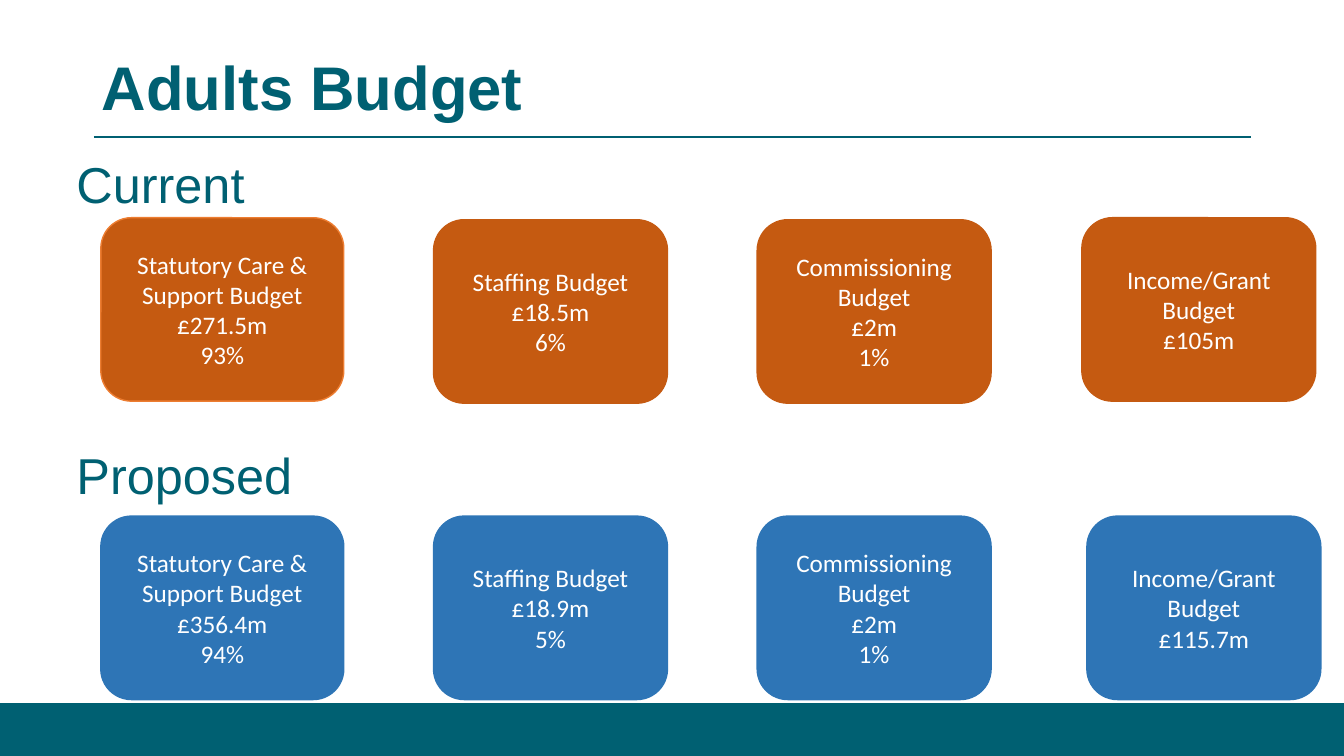
from lxml import etree
from pptx import Presentation, util as u
from pptx.dml.color import RGBColor
from pptx.enum import shapes, text
from pptx.oxml.ns import qn

TEAL = RGBColor(0x00, 0x60, 0x72)
RUST = RGBColor(0xC5, 0x5A, 0x11)
ORANGE = RGBColor(0xED, 0x7D, 0x31)
BLUE = RGBColor(0x2E, 0x75, 0xB6)
WHITE = RGBColor(0xFF, 0xFF, 0xFF)

WIDTH, HEIGHT = 13.33, 7.5
# Card grid, in inches
LEFT, COLUMN = 1.09, 3.21
TOP, ROW = 2.18, 2.94
CARD_W, CARD_H = 2.32, 1.82

SERVICES = ["Statutory Care & Support Budget", "Staffing Budget",
            "Commissioning Budget", "Income/Grant Budget"]
# Heading, heading top, fill, first card's line, figures,
# and each card's nudge from the grid (left, top)
BUDGETS = [
    ("Current", 1.47, RUST, ORANGE,
     [("£271.5m", "93%"), ("£18.5m", "6%"), ("£2m", "1%"), ("£105m",)],
     [(0, -0.02), (0, 0), (0, 0), (0.01, -0.02)]),
    ("Proposed", 4.36, BLUE, BLUE,
     [("£356.4m", "94%"), ("£18.9m", "5%"), ("£2m", "1%"), ("£115.7m",)],
     [(0, 0), (0, 0), (0, 0), (0.06, 0)]),
]


class BudgetSlide:
    def __init__(self, prs):
        self.s = prs.slides.add_slide(prs.slide_layouts[5])
        self.heading_font, self.card_font = "Arial", "Calibri"

    def set_text(self, tf, lines, font, size, color, align, bold=False):
        tf.word_wrap = True
        tf.auto_size = text.MSO_AUTO_SIZE.NONE
        tf.text = "\n".join(lines)
        for p in tf.paragraphs:
            p.alignment = align
            for r in p.runs:
                r.font.name, r.font.size, r.font.bold = font, u.Pt(size), bold
                r.font.color.rgb = color

    def block(self, kind, box, fill, line):
        sp = self.s.shapes.add_shape(kind, *map(u.Inches, box))
        sp.shadow.inherit = False
        sp.fill.solid()
        sp.fill.fore_color.rgb = fill
        sp.line.color.rgb = line
        sp.line.width = u.Pt(1)
        return sp

    def rule(self, left, right, y):
        line = self.s.shapes.add_connector(
            shapes.MSO_CONNECTOR.STRAIGHT, *map(u.Inches, (left, y, right, y)))
        line.line.color.rgb = TEAL
        line.line.width = u.Pt(1.5)
        etree.SubElement(line._element.spPr, qn("a:effectLst"))

    def title(self, words, box):
        sp = self.s.shapes.title
        sp.left, sp.top, sp.width, sp.height = map(u.Inches, box)
        sp.text_frame.vertical_anchor = text.MSO_ANCHOR.MIDDLE
        self.set_text(sp.text_frame, [words], self.heading_font, 44, TEAL,
                      text.PP_ALIGN.LEFT, bold=True)

    def heading(self, words, top):
        sp = self.s.shapes.add_textbox(*map(u.Inches, (0.66, top, 2.41, 0.71)))
        self.set_text(sp.text_frame, [words], self.heading_font, 36, TEAL,
                      text.PP_ALIGN.LEFT)

    def card(self, column, row, nudge, lines, fill, line, extra=0):
        """Place a card on the grid; extra widens it to the left."""
        box = (LEFT + column * COLUMN + nudge[0] - extra,
               TOP + row * ROW + nudge[1], CARD_W + extra, CARD_H)
        sp = self.block(shapes.MSO_SHAPE.ROUNDED_RECTANGLE, box, fill, line)
        sp.text_frame.vertical_anchor = text.MSO_ANCHOR.MIDDLE
        self.set_text(sp.text_frame, lines, self.card_font, 18, WHITE,
                      text.PP_ALIGN.CENTER)


def main():
    prs = Presentation()
    prs.slide_width, prs.slide_height = u.Inches(WIDTH), u.Inches(HEIGHT)
    slide = BudgetSlide(prs)
    slide.rule(0.93, 12.41, 1.36)
    slide.block(shapes.MSO_SHAPE.RECTANGLE, (0, 6.98, WIDTH, 0.59), TEAL, TEAL)
    slide.title("Adults Budget", (0.91, 0.43, 8.03, 0.84))
    for row, (name, top, fill, first_line, figures, nudges) in enumerate(BUDGETS):
        slide.heading(name, top)
        for column, service in enumerate(SERVICES):
            first = column == 0
            slide.card(column, row, nudges[column], [service, *figures[column]],
                       fill, first_line if first else fill,
                       extra=0.09 if first else 0)
    prs.save("out.pptx")


if __name__ == "__main__":
    main()
